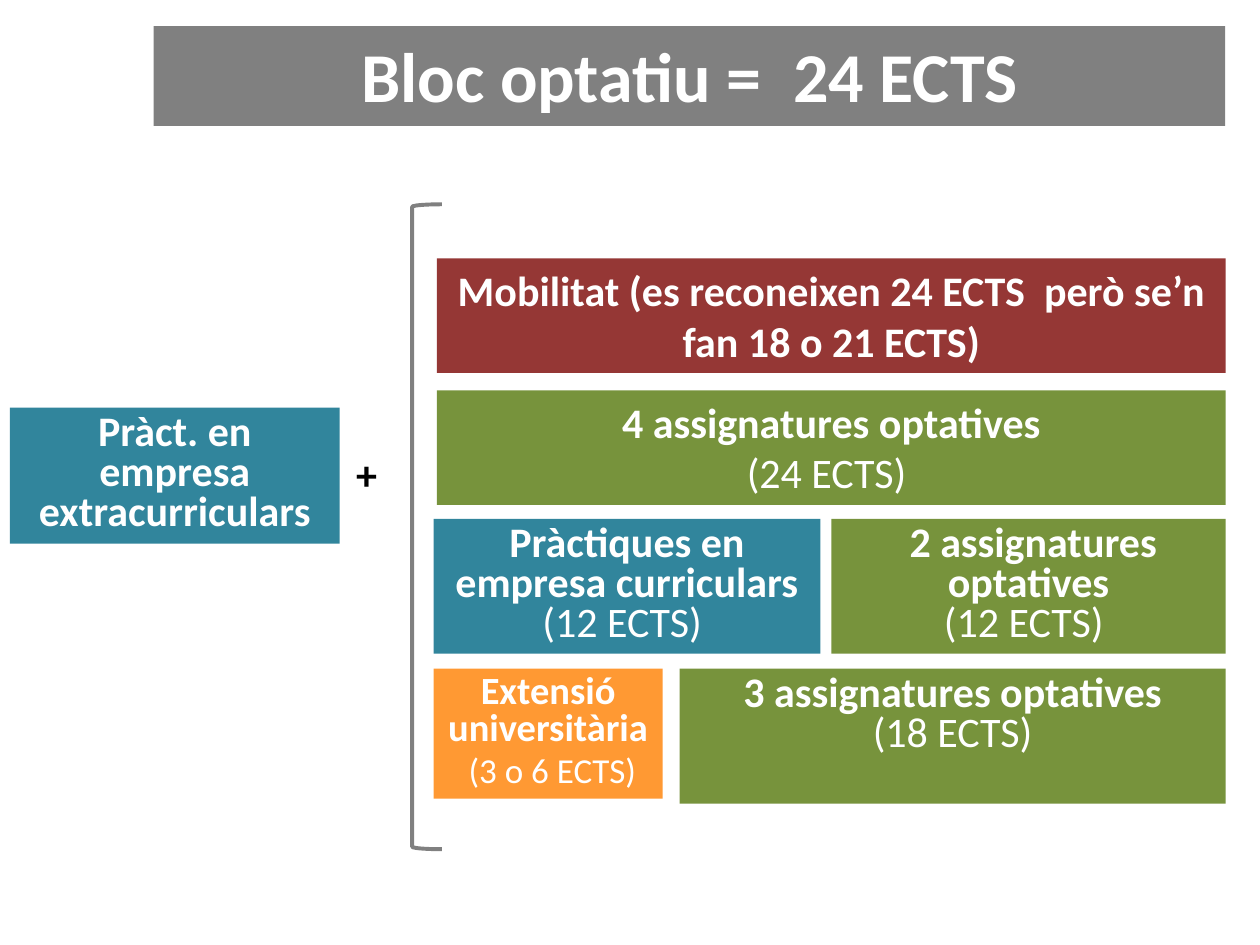
from dataclasses import dataclass

from pptx import Presentation
from pptx.dml.color import RGBColor
from pptx.enum.shapes import MSO_SHAPE
from pptx.enum.text import MSO_ANCHOR, PP_ALIGN
from pptx.util import Cm, Pt


@dataclass(frozen=True)
class Theme:
    """Hold the font, colours and type sizes."""
    font: str = "Calibri"
    gray: str = "808080"
    red: str = "953735"
    green: str = "77933C"
    teal: str = "31859C"
    amber: str = "FF9933"
    white: str = "FFFFFF"
    black: str = "000000"
    title: int = 40
    body: int = 24
    label: int = 22
    note: int = 20


THEME = Theme()
RIGHT = 24.71


def add_run(para, text, size, bold=True, color=THEME.white):
    """Add one styled run to a paragraph."""
    run = para.add_run()
    run.text = text
    font = run.font
    font.name, font.size, font.bold = THEME.font, Pt(size), bold
    font.color.rgb = RGBColor.from_string(color)


def add_box(slide, place, color, lines, space=1.0, after=0):
    """Add a filled box; each line is a list of (text, size, bold) runs."""
    box = slide.shapes.add_shape(MSO_SHAPE.RECTANGLE, *map(Cm, place))
    box.shadow.inherit = False
    box.fill.solid()
    box.fill.fore_color.rgb = RGBColor.from_string(color)
    box.line.fill.background()
    frame = box.text_frame
    frame.word_wrap = True
    frame.vertical_anchor = MSO_ANCHOR.TOP
    for index, runs in enumerate(lines):
        para = frame.add_paragraph() if index else frame.paragraphs[0]
        para.alignment = PP_ALIGN.CENTER
        para.line_spacing = space
        para.space_after = Pt(after)
        for run in runs:
            add_run(para, *run)


def add_course(slide, left, top, color, name, points, right=RIGHT):
    """Add a tight box with a course name over its credits."""
    lines = [[(name, THEME.body)], [(points, THEME.body, False)]]
    add_box(slide, (left, top, right - left, 2.72), color, lines, 0.8)


def add_brace(slide, place):
    """Add the left bracket that groups the options."""
    brace = slide.shapes.add_shape(MSO_SHAPE.LEFT_BRACKET, *map(Cm, place))
    brace.shadow.inherit = False
    brace.fill.background()
    brace.line.color.rgb = RGBColor.from_string(THEME.gray)
    brace.line.width = Pt(2.25)


def add_sign(slide, place, text):
    """Add a bare text sign."""
    frame = slide.shapes.add_textbox(*map(Cm, place)).text_frame
    frame.word_wrap = False
    add_run(frame.paragraphs[0], text, THEME.body, color=THEME.black)


def main():
    """Build the slide and save it."""
    deck = Presentation()
    deck.slide_width, deck.slide_height = Cm(25.4), Cm(19.05)
    slide = deck.slides.add_slide(deck.slide_layouts[6])
    body = THEME.body

    add_box(slide, (3.1, 0.53, 21.6, 2.01), THEME.gray,
            [[("Bloc optatiu =  24 ECTS", THEME.title)]])

    wide = 8.81
    add_box(slide, (wide, 5.21, RIGHT - wide, 2.31), THEME.red,
            [[("Mobilitat (es reconeixen 24 ECTS  però se’n fan 18 o 21 ECTS)", body)]])
    add_box(slide, (wide, 7.87, RIGHT - wide, 2.31), THEME.green,
            [[("4 assignatures optatives", body)], [("(24 ECTS) ", body, False)]])

    left, third, fourth = 8.74, 10.46, 13.48
    add_course(slide, left, third, THEME.teal,
               "Pràctiques en empresa curriculars", "(12 ECTS) ", right=16.54)
    add_course(slide, 16.76, third, THEME.green,
               " 2 assignatures optatives", "(12 ECTS) ")
    add_box(slide, (left, fourth, 4.62, 2.62), THEME.amber,
            [[("Extensió universitària", THEME.label)],
             [(" ", THEME.label), ("(3 o 6 ECTS)", THEME.note, False)]], 0.8, 3)
    add_course(slide, 13.7, fourth, THEME.green,
               "3 assignatures optatives", "(18 ECTS)")

    add_box(slide, (0.2, 8.22, 6.65, 2.74), THEME.teal,
            [[("Pràct. en empresa extracurriculars", body)]], 0.8)
    add_brace(slide, (8.31, 4.12, 0.6, 13))
    add_sign(slide, (6.93, 8.92, 0.94, 1.27), "+")

    deck.save("out.pptx")


if __name__ == "__main__":
    main()
